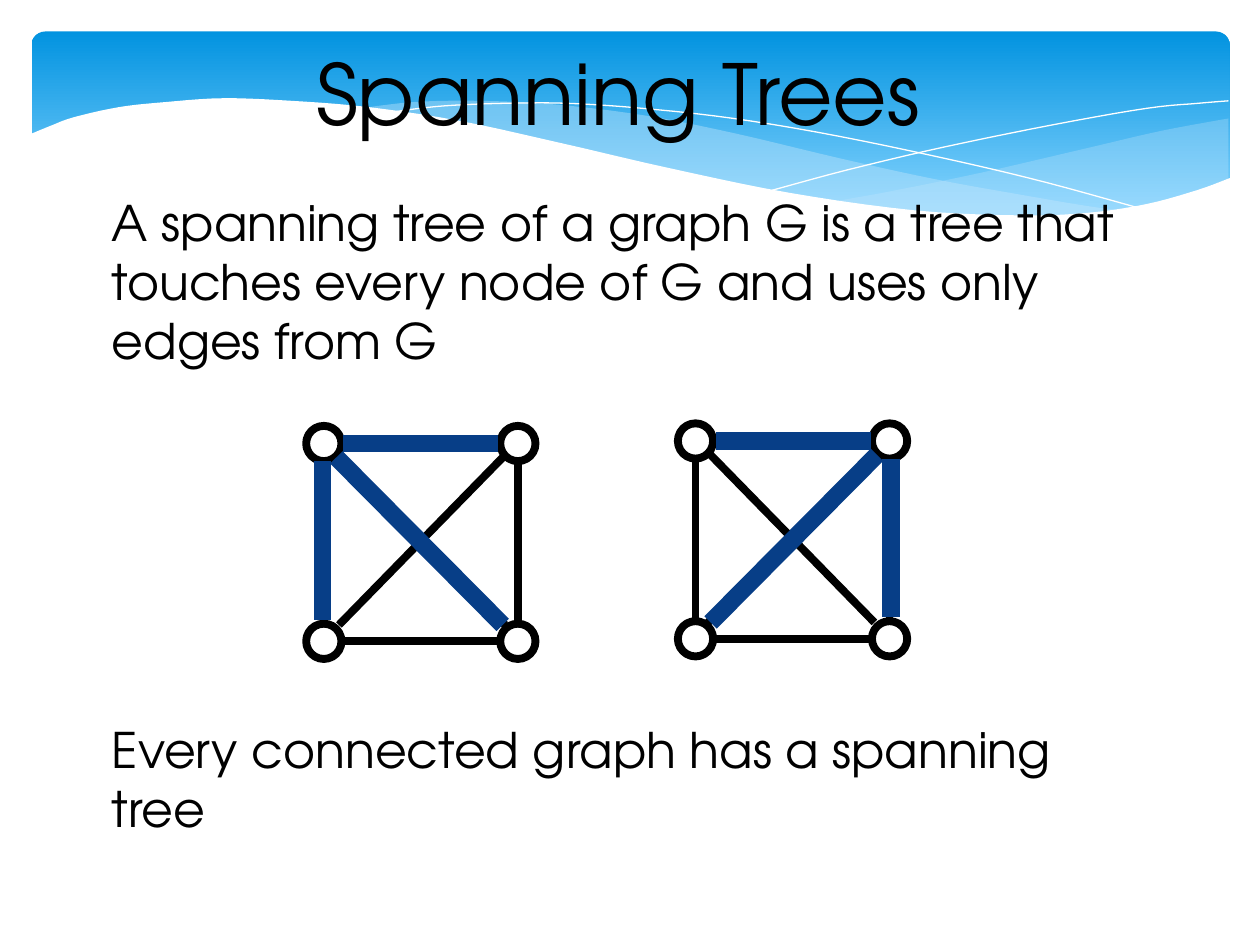
from lxml.etree import SubElement
from pptx import Presentation
from pptx.dml.color import RGBColor
from pptx.enum.shapes import MSO_CONNECTOR, MSO_SHAPE
from pptx.oxml.ns import qn
from pptx.util import Inches, Pt

COLORS = {"sky": "0293E0", "pale": "83D3FE", "wave": "C6E7FC",
          "white": "FFFFFF", "ink": "000000", "tree": "073E87"}
FONT = "TeX Gyre Adventor"

# Curve points, in inches from the corner of the header band
RIGHT_WAVE_TOP = [(9.5, 0.69), (8.96, 0.79), (8.36, 0.93), (7.54, 1.12),
                  (6.81, 1.27), (6.36, 1.35)]
RIGHT_WAVE_BOTTOM = [(6.36, 1.35), (7.07, 1.43), (7.67, 1.47), (8.1, 1.47),
                     (8.56, 1.42), (9.03, 1.33), (9.5, 1.17)]
MID_WAVE_TOP = [(2.61, 0.61), (3.03, 0.56), (3.55, 0.55), (4.17, 0.58),
                (4.89, 0.67), (5.59, 0.81), (6.43, 1.01), (7.16, 1.17),
                (7.82, 1.29), (8.41, 1.39), (8.68, 1.42)]
MID_WAVE_BOTTOM = [(8.68, 1.42), (8.32, 1.46), (7.82, 1.48), (7.23, 1.45),
                   (6.55, 1.38), (5.76, 1.25), (5.05, 1.1), (4.24, 0.91),
                   (3.58, 0.76), (2.98, 0.65), (2.61, 0.61)]
FALLING_LINE = [(2.84, 0.65), (2.93, 0.63), (3.28, 0.59), (3.76, 0.57),
                (4.25, 0.57), (4.85, 0.61), (5.57, 0.69), (6.4, 0.83),
                (7.35, 1.03), (8.06, 1.2), (8.82, 1.41)]
RISING_LINE = [(5.88, 1.26), (6.47, 1.1), (7.23, 0.92), (8.11, 0.74),
               (8.85, 0.61), (9.26, 0.57), (9.5, 0.55)]
WHITE_EDGE = [(-0.02, 0.82), (0.15, 0.75), (0.34, 0.68), (0.7, 0.6),
              (1.07, 0.56), (1.52, 0.53), (2.05, 0.55), (2.67, 0.6),
              (3.4, 0.71), (4.22, 0.89), (5.04, 1.08), (6.01, 1.28),
              (7.01, 1.42), (7.84, 1.46), (8.38, 1.44), (8.85, 1.37),
              (9.25, 1.26), (9.52, 1.16)]

# Edges of the graph, in inches from the corner of its box
GRAPH_EDGES = [((0.28, 0.14), (1.57, 0.14)), ((0.14, 1.55), (0.14, 0.26)),
               ((1.68, 1.59), (1.68, 0.29)), ((0.26, 1.71), (1.56, 1.71)),
               ((1.58, 1.58), (0.25, 0.22)), ((0.26, 1.58), (1.59, 0.22))]
TREE_EDGES = [((0.29, 0.14), (1.52, 0.14)), ((0.24, 0.25), (1.56, 1.58)),
              ((0.13, 0.28), (0.13, 1.54))]


def rgb(name):
    return RGBColor.from_string(COLORS[name])


def smooth(points, steps=5):
    """Points of a Catmull-Rom curve through the given points."""
    padded = [points[0], *points, points[-1]]
    curve = []
    for a, b, c, d in zip(padded, padded[1:], padded[2:], padded[3:]):
        for i in range(steps):
            t = i / steps
            curve.append(tuple(
                q + t / 2 * (r - p + t * (2 * p - 5 * q + 4 * r - s
                                          + t * (3 * q - p - 3 * r + s)))
                for p, q, r, s in zip(a, b, c, d)))
    return curve + [points[-1]]


def add_path(slide, x, y, points, fill=None, alpha=None):
    """Filled outline, or a white hairline when no fill is given."""
    placed = [(Inches(x + px), Inches(y + py)) for px, py in points]
    builder = slide.shapes.build_freeform(*placed[0])
    builder.add_line_segments(placed[1:], close=fill is not None)
    s = builder.convert_to_shape()
    s.shadow.inherit = False
    if fill is None:
        s.fill.background()
        s.line.color.rgb = rgb("white")
        s.line.width = Pt(0)
        return
    s.fill.solid()
    s.fill.fore_color.rgb = rgb(fill)
    s.line.fill.background()
    if alpha:
        color = s.fill._xPr.find(".//" + qn("a:srgbClr"))
        SubElement(color, qn("a:alpha")).set("val", str(alpha * 1000))


def add_header(slide, x, y, w, h):
    band = slide.shapes.add_shape(MSO_SHAPE.ROUNDED_RECTANGLE, Inches(x),
                                  Inches(y), Inches(w), Inches(h))
    band.adjustments[0] = 0.07
    band.shadow.inherit = False
    band.line.fill.background()
    band.fill.gradient()
    band.fill.gradient_angle = 270
    for stop, name, position in zip(band.fill.gradient_stops,
                                    ("sky", "pale"), (0, 0.9)):
        stop.color.rgb = rgb(name)
        stop.position = position
    add_path(slide, x, y, smooth(RIGHT_WAVE_TOP) + smooth(RIGHT_WAVE_BOTTOM),
             "wave", 29)
    add_path(slide, x, y, smooth(MID_WAVE_TOP) + smooth(MID_WAVE_BOTTOM),
             "wave", 40)
    add_path(slide, x, y, smooth(FALLING_LINE))
    add_path(slide, x, y, smooth(RISING_LINE))
    add_path(slide, x, y,
             smooth(WHITE_EDGE) + [(9.52, 1.99), (-0.02, 1.99)], "white")


def add_text(slide, x, y, w, h, text, size):
    tf = slide.shapes.add_textbox(Inches(x), Inches(y), Inches(w),
                                  Inches(h)).text_frame
    tf.word_wrap = True
    p = tf.paragraphs[0]
    p.text = text
    p.font.size = Pt(size)
    p.font.name = FONT
    p.font.color.rgb = rgb("ink")


def add_edge(slide, start, end, color, width):
    s = slide.shapes.add_connector(MSO_CONNECTOR.STRAIGHT,
                                   *map(Inches, start + end))
    s.line.color.rgb = rgb(color)
    s.line.width = Pt(width)
    SubElement(s._element.spPr, qn("a:effectLst"))


def add_graph(slide, x, y, w, h, mirrored=False):
    """Complete graph on four nodes with a spanning tree marked."""
    node = 0.28
    for dx in (0, w - node):
        for dy in (0, h - node):
            s = slide.shapes.add_shape(MSO_SHAPE.OVAL, Inches(x + dx),
                                       Inches(y + dy), Inches(node),
                                       Inches(node))
            s.shadow.inherit = False
            s.fill.background()
            s.line.color.rgb = rgb("ink")
            s.line.width = Pt(4.5)

    def place(point):
        px, py = point
        return x + (w - px if mirrored else px), y + py

    for edges, color, width in ((GRAPH_EDGES, "ink", 4.5),
                                (TREE_EDGES, "tree", 10)):
        for start, end in edges:
            add_edge(slide, place(start), place(end), color, width)


def main():
    prs = Presentation()
    prs.slide_width, prs.slide_height = Inches(10), Inches(7.5)
    slide = prs.slides.add_slide(prs.slide_layouts[6])
    add_header(slide, 0.25, 0.25, 9.51, 1.56)
    add_text(slide, 2.41, 0.28, 5.29, 0.9, "Spanning Trees", 48)
    add_text(slide, 0.79, 1.48, 8.45, 1.5,
             "A spanning tree of a graph G is a tree that touches every "
             "node of G and uses only edges from G", 28)
    add_text(slide, 0.79, 5.66, 8.4, 0.57,
             "Every connected graph has a spanning tree", 28)
    add_graph(slide, 2.43, 3.38, 1.82, 1.85)
    add_graph(slide, 5.38, 3.36, 1.82, 1.85, mirrored=True)
    prs.save("out.pptx")


if __name__ == "__main__":
    main()
